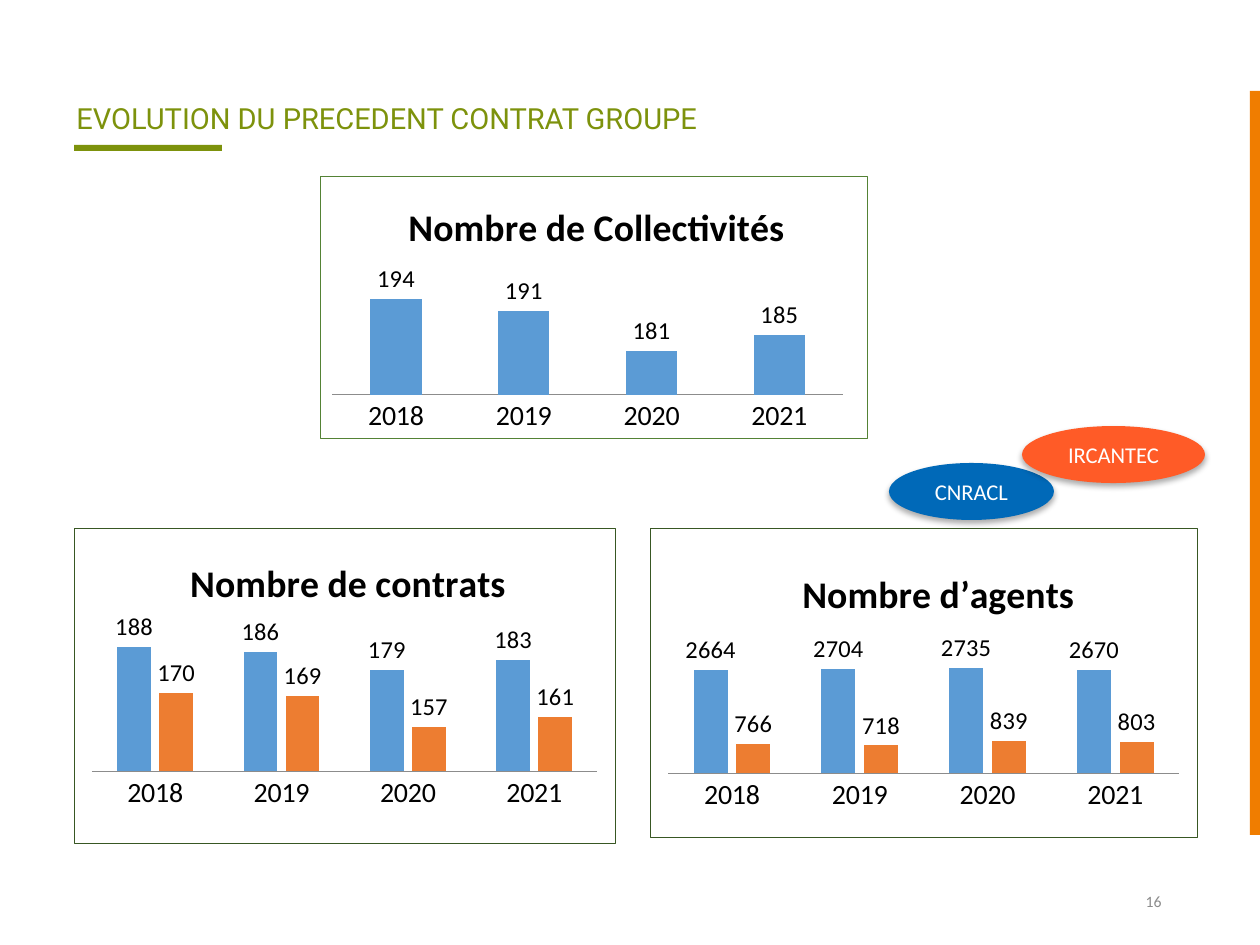
import pptx
import pptx.chart.data
import pptx.dml.color
import pptx.enum.chart
import pptx.enum.shapes
import pptx.enum.text
import pptx.oxml
import pptx.oxml.ns
import pptx.util

GREEN, ORANGE, WHITE, BLACK, GREY = "7D920C", "F07D00", "FFFFFF", "000000", "8C8C8C"
BARS = ("5B9BD5", "ED7D31")
YEARS = ("2018", "2019", "2020", "2021")
SHAPE = pptx.enum.shapes.MSO_SHAPE
ALIGN = pptx.enum.text.PP_ALIGN
MIDDLE = pptx.enum.text.MSO_ANCHOR.MIDDLE
NS = pptx.oxml.ns.nsdecls("a", "c")


def px(n):
    return pptx.util.Emu(round(n * 914400 / 126))


def rgb(code):
    return pptx.dml.color.RGBColor.from_string(code)


def style(font, size, color, name="Calibri", bold=False):
    font.size, font.name, font.bold = pptx.util.Pt(size), name, bold
    font.color.rgb = rgb(color)


def write(frame, words, size, color, align, name="Calibri"):
    frame.word_wrap = True
    line = frame.paragraphs[0]
    line.text, line.alignment = words, align
    style(line.font, size, color, name)


def label(slide, box, words, size, color, align, name="Calibri"):
    frame = slide.shapes.add_textbox(*map(px, box)).text_frame
    write(frame, words, size, color, align, name)
    return frame


def solid(slide, kind, box, color):
    shape = slide.shapes.add_shape(kind, *map(px, box))
    shape.shadow.inherit = False
    shape.fill.solid()
    shape.fill.fore_color.rgb = rgb(color)
    shape.line.fill.background()
    return shape


def badge(slide, box, words, color):
    """Ellipse with a soft shadow that names a pension fund."""
    shape = solid(slide, SHAPE.OVAL, box, color)
    shape.text_frame.vertical_anchor = MIDDLE
    write(shape.text_frame, words, 12.9, WHITE, ALIGN.CENTER)
    shape._element.spPr.find(pptx.oxml.ns.qn("a:effectLst")).append(pptx.oxml.parse_xml(
        f'<a:outerShdw {NS} blurRad="44450" dist="27940" dir="5400000" algn="ctr">'
        f'<a:srgbClr val="{BLACK}"><a:alpha val="32000"/></a:srgbClr></a:outerShdw>'))


def layout(x, y, w=None, h=None):
    """Manual chart layout in fractions; a size makes it an inner plot area."""
    parts = "" if w is None else '<c:layoutTarget val="inner"/>'
    parts += '<c:xMode val="edge"/><c:yMode val="edge"/>'
    for tag, val in zip("xywh", (x, y, w, h)):
        if val is not None:
            parts += f'<c:{tag} val="{val:.3f}"/>'
    return pptx.oxml.parse_xml(
        f'<c:layout {NS}><c:manualLayout>{parts}</c:manualLayout></c:layout>')


def frame(chart, color):
    """Thin square border around the whole chart."""
    space = chart._chartSpace
    for old in space.findall(pptx.oxml.ns.qn("c:roundedCorners")):
        space.remove(old)
    space.find(pptx.oxml.ns.qn("c:date1904")).addnext(
        pptx.oxml.parse_xml(f'<c:roundedCorners {NS} val="0"/>'))
    space.find(pptx.oxml.ns.qn("c:chart")).addnext(pptx.oxml.parse_xml(
        f'<c:spPr {NS}><a:noFill/><a:ln w="9525"><a:solidFill>'
        f'<a:srgbClr val="{color}"/></a:solidFill></a:ln></c:spPr>'))


def columns(slide, box, title, spot, plot, span, border, rows):
    data = pptx.chart.data.CategoryChartData()
    data.categories = YEARS
    for i, row in enumerate(rows, 1):
        data.add_series(f"Series {i}", row)
    kinds = pptx.enum.chart
    chart = slide.shapes.add_chart(
        kinds.XL_CHART_TYPE.COLUMN_CLUSTERED, *map(px, box), data).chart
    style(chart.font, 18, BLACK)
    chart.has_legend = False

    head = chart.chart_title
    head.text_frame.text = title
    style(head.text_frame.paragraphs[0].font, 21.6, BLACK, bold=True)
    head.include_in_layout = False
    top = head._element
    for old in top.findall(pptx.oxml.ns.qn("c:layout")):
        top.remove(old)
    top.find(pptx.oxml.ns.qn("c:tx")).addnext(
        layout(spot[0] / box[2], spot[1] / box[3]))

    area = chart._chartSpace.chart.plotArea
    for old in area.findall(pptx.oxml.ns.qn("c:layout")):
        area.remove(old)
    area.insert(0, layout(*plot))

    axis = chart.category_axis
    axis.major_tick_mark = kinds.XL_TICK_MARK.NONE
    axis.format.line.color.rgb = rgb(GREY)
    axis.format.line.width = pptx.util.Pt(0.75)
    style(axis.tick_labels.font, 16, BLACK)
    scale = chart.value_axis
    scale.minimum_scale, scale.maximum_scale = span
    scale.has_major_gridlines = scale.visible = False

    group = chart.plots[0]
    group.gap_width, group.overlap, group.vary_by_categories = 150, -25, False
    for series, color in zip(group.series, BARS):
        series.format.fill.solid()
        series.format.fill.fore_color.rgb = rgb(color)
        series.invert_if_negative = False
        tags = series.data_labels
        tags.show_value = True
        tags.position = kinds.XL_LABEL_POSITION.OUTSIDE_END
        style(tags.font, 14, BLACK)
    frame(chart, border)


def main():
    deck = pptx.Presentation()
    deck.slide_width, deck.slide_height = px(1260), px(945)
    slide = deck.slides.add_slide(deck.slide_layouts[6])

    page = label(slide, (890, 876, 284, 50), "16", 9, GREY, ALIGN.RIGHT)
    page.vertical_anchor = MIDDLE
    label(slide, (64, 94, 1062, 48), "EVOLUTION DU PRECEDENT CONTRAT GROUPE",
          16.6, GREEN, ALIGN.LEFT, "Roboto")
    solid(slide, SHAPE.RECTANGLE, (74, 145, 148, 6), GREEN)
    solid(slide, SHAPE.RECTANGLE, (1250, 91, 10, 744), ORANGE)

    columns(slide, (74, 528, 542, 316), "Nombre de contrats", (109, 21),
            (0.032, 0.276, 0.935, 0.496), (140, 200), "385723",
            ((188, 186, 179, 183), (170, 169, 157, 161)))
    columns(slide, (320, 176, 548, 263), "Nombre de Collectivités", (81, 17),
            (0.021, 0.375, 0.935, 0.458), (170, 200), "548235",
            ((194, 191, 181, 185),))
    columns(slide, (650, 528, 548, 310), "Nombre d’agents", (145, 32),
            (0.032, 0.417, 0.935, 0.376), (0, 3000), "385723",
            ((2664, 2704, 2735, 2670), (766, 718, 839, 803)))

    badge(slide, (889, 463, 165, 57), "CNRACL", "0069B8")
    badge(slide, (1022, 426, 183, 57), "IRCANTEC", "FF5B27")
    deck.save("out.pptx")


if __name__ == "__main__":
    main()
